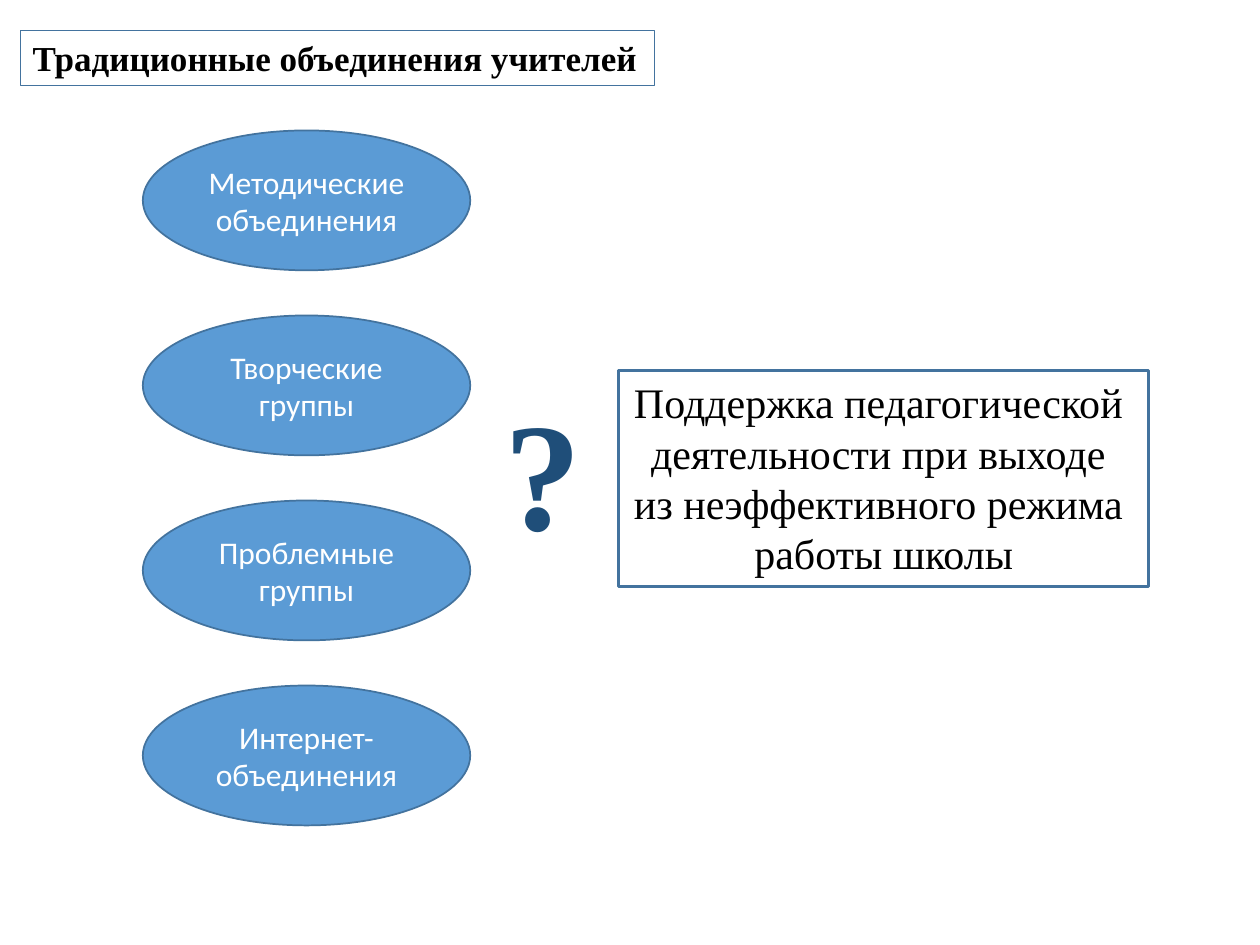
import pptx
import pptx.util
import pptx.dml.color
import pptx.enum.shapes
import pptx.enum.text

Cm, Pt = pptx.util.Cm, pptx.util.Pt
SHAPE = pptx.enum.shapes.MSO_SHAPE
ALIGN = pptx.enum.text.PP_ALIGN
ANCHOR = pptx.enum.text.MSO_ANCHOR

# Content
TITLE = ["Традиционные объединения учителей"]
GROUPS = ["Методические объединения", "Творческие группы",
          "Проблемные группы", "Интернет-объединения"]
QUESTION = ["?"]
SUPPORT = ["Поддержка педагогической ", "деятельности при выходе ",
           "из неэффективного режима ", "работы школы"]

COLORS = {"oval": "5B9BD5", "line": "43739E", "question": "1F4E79",
          "dark": "000000", "light": "FFFFFF"}
SERIF, SANS = "Times New Roman", "Calibri"


def rgb(name):
    return pptx.dml.color.RGBColor.from_string(COLORS[name])


def write(s, lines, size, font=SERIF, color="dark", bold=False,
          align=ALIGN.LEFT, anchor=ANCHOR.TOP, wrap=False):
    tf = s.text_frame
    tf.word_wrap = wrap
    tf.vertical_anchor = anchor
    if not wrap:
        tf.auto_size = pptx.enum.text.MSO_AUTO_SIZE.SHAPE_TO_FIT_TEXT
    for i, line in enumerate(lines):
        p = tf.paragraphs[0] if i == 0 else tf.add_paragraph()
        p.alignment = align
        r = p.add_run()
        r.text = line
        r.font.name, r.font.size, r.font.bold = font, Pt(size), bold
        r.font.color.rgb = rgb(color)


def add_shape(slide, kind, left, top, width, height, line_width, fill=None):
    s = slide.shapes.add_shape(kind, Cm(left), Cm(top), Cm(width), Cm(height))
    s.shadow.inherit = False
    if fill:
        s.fill.solid()
        s.fill.fore_color.rgb = rgb(fill)
    else:
        s.fill.background()
    s.line.color.rgb = rgb("line")
    s.line.width = Pt(line_width)
    return s


prs = pptx.Presentation()
prs.slide_width, prs.slide_height = Cm(25.4), Cm(19.05)
slide = prs.slides.add_slide(prs.slide_layouts[6])

# Title frame
s = add_shape(slide, SHAPE.RECTANGLE, 0.41, 0.62, 12.78, 1.11, 0.75)
write(s, TITLE, 20, bold=True)

# Column of teacher groups
OVAL_TOP, OVAL_STEP = 2.63, 3.73
for i, group in enumerate(GROUPS):
    s = add_shape(slide, SHAPE.OVAL, 2.88, OVAL_TOP + i * OVAL_STEP,
                  6.6, 2.82, 1, fill="oval")
    write(s, [group], 18, font=SANS, color="light", align=ALIGN.CENTER,
          anchor=ANCHOR.MIDDLE, wrap=True)

# Question mark
s = slide.shapes.add_textbox(Cm(9.93), Cm(7.47), Cm(2.08), Cm(4.01))
write(s, QUESTION, 88, color="question", bold=True)

# Support frame
s = add_shape(slide, SHAPE.RECTANGLE, 12.47, 7.47, 10.69, 4.36, 1.5)
write(s, SUPPORT, 24, align=ALIGN.CENTER)

prs.save("out.pptx")
